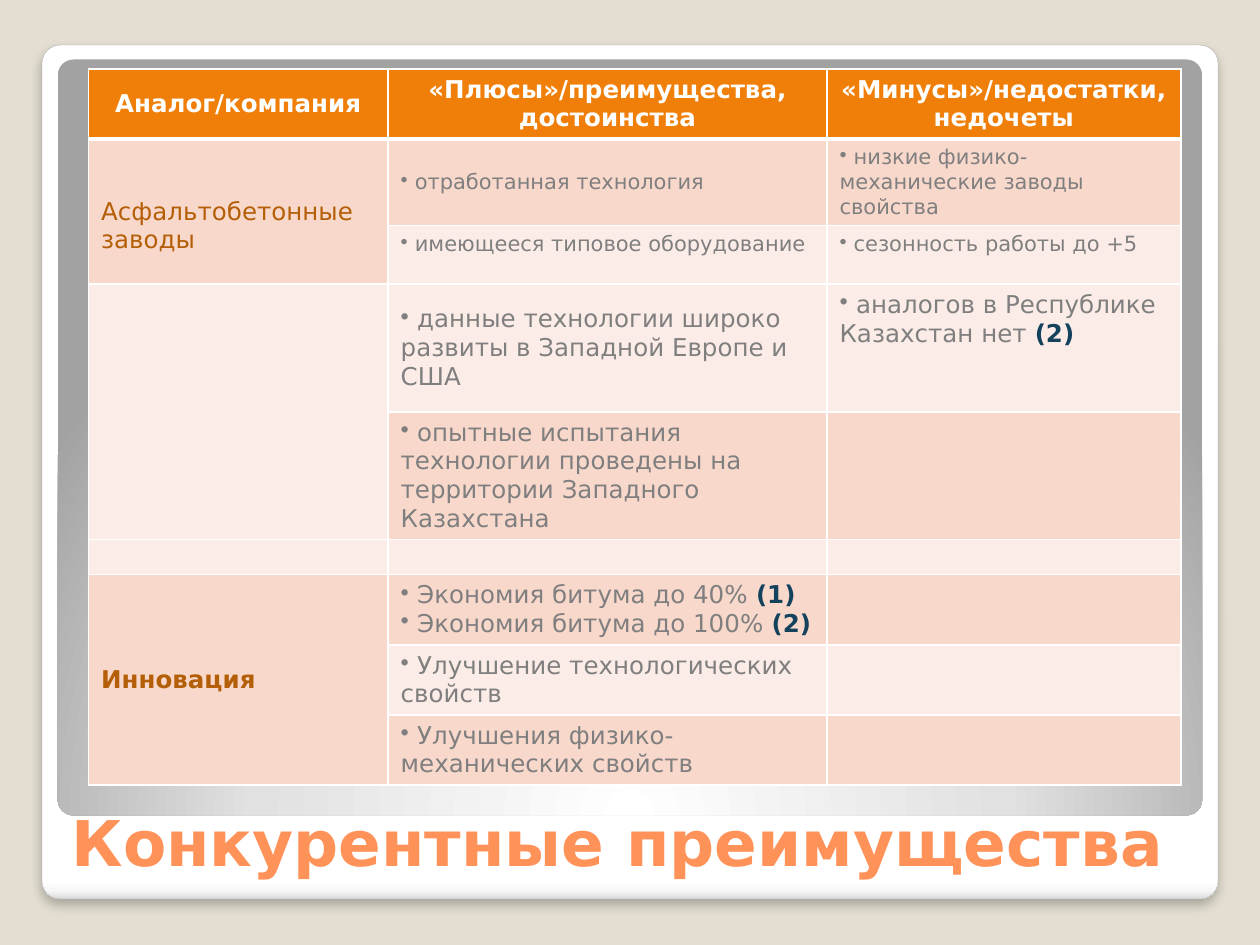
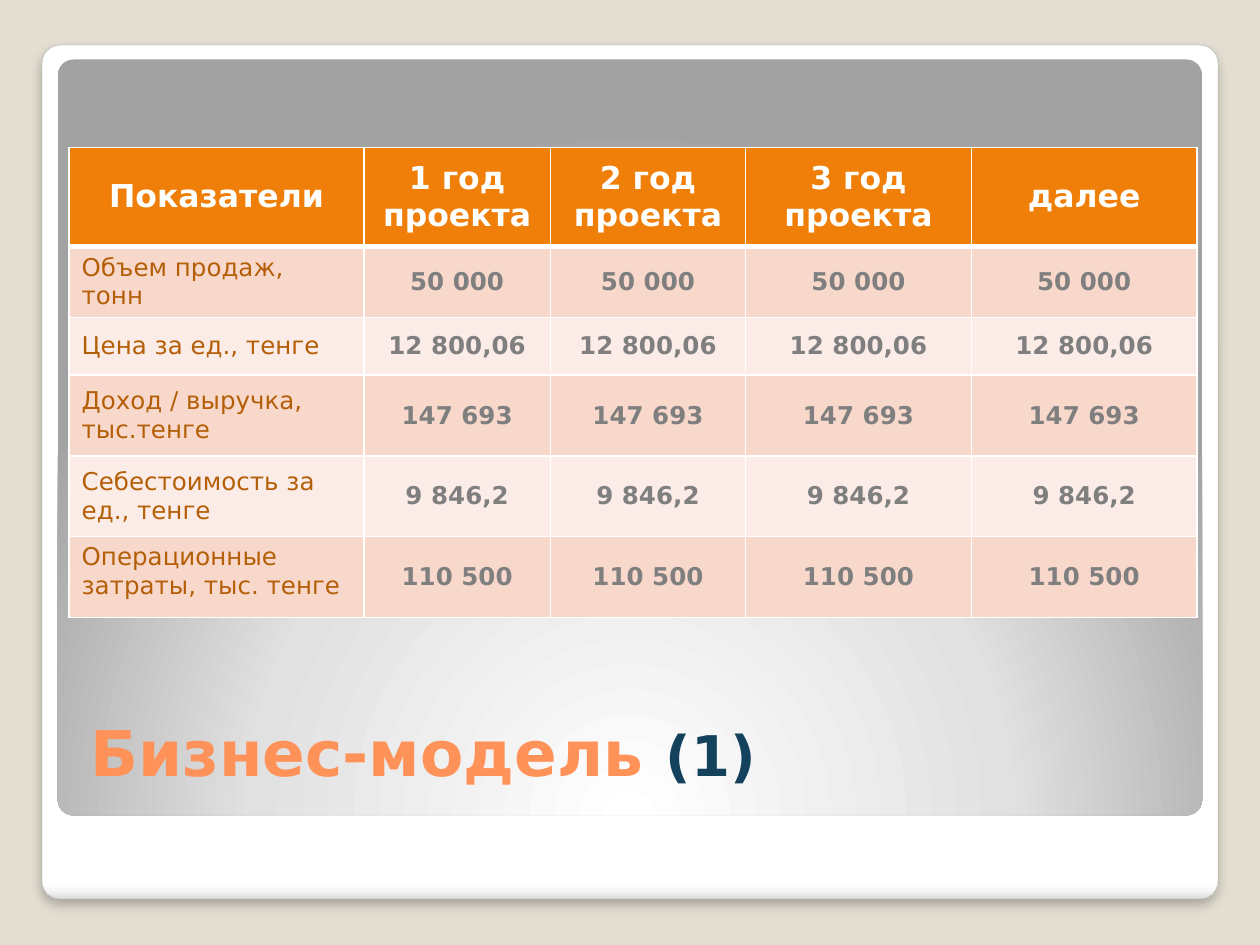
from lxml import etree
from pptx import Presentation
from pptx.dml.color import RGBColor
from pptx.enum.shapes import MSO_SHAPE
from pptx.enum.text import MSO_ANCHOR, PP_ALIGN
from pptx.oxml import parse_xml
from pptx.oxml.ns import nsdecls, qn
from pptx.util import Pt

# Shared look
FONT = "DejaVu Sans"
BACKDROP, WHITE, FRAME_LINE = "E3DED1", "FFFFFF", "A4A4A4"
TITLE, NOTE, LABEL, BODY = "FF9258", "14425D", "B45F07", "7F7F7F"
HEADER = "F07F09"
BANDS = {"D": "F9D8CC", "L": "FCECE7"}
CARD_STOPS = [(0, "FFFFFF"), (98, "FFFFFF"), (99, "F7F7F7"), (100, "DADADA")]
PANEL_STOPS = [(0, "FFFFFF"), (55, "E1E1E1"), (100, "A2A2A2")]
CARD_PATH = '<a:lin ang="5400000" scaled="0"/>'
PANEL_PATH = ('<a:path path="circle"><a:fillToRect l="50000" t="175000" '
              'r="50000" b="-75000"/></a:path>')
CARD_SHADOW = ('<a:outerShdw blurRad="76200" dist="50800" dir="5400000" rotWithShape="0">'
               '<a:srgbClr val="000000"><a:alpha val="25000"/></a:srgbClr></a:outerShdw>')

# Content: a bracketed number in a text is a highlighted note
ADVANTAGES = {
    "title": "Конкурентные преимущества",
    "title_box": (33.8, 461.5, 644.4, 44.6),
    "origin": (50.6, 39.4),
    "columns": (171.2, 250.8, 202.2),
    "heights": (40, 49, 33.5, 73, 73, 20, 40, 40, 40),
    "sizes": (14, 12, 12, 14, 14, 10, 14, 14, 14),
    "bands": "DLLDLDLD",
    "rows": [
        ("Аналог/компания", "«Плюсы»/преимущества, достоинства",
         "«Минусы»/недостатки, недочеты"),
        ("Асфальтобетонные заводы", "отработанная технология",
         "низкие физико-механические заводы свойства"),
        ("", "имеющееся типовое оборудование", "сезонность работы до +5"),
        ("", "данные технологии широко развиты в Западной Европе и США",
         "аналогов в Республике Казахстан нет (2)"),
        ("", "опытные испытания технологии проведены на территории Западного Казахстана", ""),
        ("", "", ""),
        ("Инновация", "Экономия битума до 40% (1)\nЭкономия битума до 100% (2)", ""),
        ("", "Улучшение технологических свойств", ""),
        ("", "Улучшения физико-механических свойств", ""),
    ],
    "bullets": True,
    "spans": [(1, 2), (3, 4), (6, 8)],
    "middle": {(1, 0), (1, 1), (3, 1), (6, 0)},
}

YEARS = 4
MODEL = {
    "title": "Бизнес-модель (1)",
    "title_box": (44.6, 371.5, 644.4, 82.8),
    "origin": (39.5, 84.4),
    "columns": (168.5, 106.5, 111.6, 129, 129),
    "heights": (56.5, 40.5, 33, 46.2, 46.2, 46.2),
    "sizes": (18, 14, 14, 14, 14, 14),
    "bands": "DLDLD",
    "rows": [("Показатели", "1 год проекта", "2 год проекта", "3 год проекта", "далее")] + [
        (indicator,) + (amount,) * YEARS for indicator, amount in [
            ("Объем продаж, тонн", "50 000"),
            ("Цена за ед., тенге", "12 800,06"),
            ("Доход / выручка, тыс.тенге", "147 693"),
            ("Себестоимость за ед., тенге", "9 846,2"),
            ("Операционные затраты, тыс. тенге", "110 500"),
        ]],
    "bullets": False,
    "spans": [],
    "middle": {(row, column) for row in range(1, 6) for column in range(5)} - {(5, 0)},
}


def rgb(color):
    return RGBColor.from_string(color)


def write(paragraph, text, size, color, bold=False, note_size=None):
    """Write a text, with its bracketed note in the note colour."""
    main, bracket, rest = text.partition("(")
    parts = [(main, size, color, bold), (bracket + rest, note_size or size, NOTE, True)]
    for words, points, tint, weight in parts:
        if words:
            run = paragraph.add_run()
            run.text = words
            run.font.name, run.font.size, run.font.bold = FONT, Pt(points), weight
            run.font.color.rgb = rgb(tint)


# Backdrop
def add_plate(slide, box, stops, direction):
    plate = slide.shapes.add_shape(MSO_SHAPE.ROUNDED_RECTANGLE, *map(Pt, box))
    plate.adjustments[0] = 0.021
    plate.shadow.inherit = False
    plate.line.fill.background()
    marks = "".join(f'<a:gs pos="{position * 1000}"><a:srgbClr val="{color}"/></a:gs>'
                    for position, color in stops)
    gradient = parse_xml(f'<a:gradFill {nsdecls("a")} rotWithShape="1">'
                         f'<a:gsLst>{marks}</a:gsLst>{direction}</a:gradFill>')
    plate.element.spPr.find(qn("a:prstGeom")).addnext(gradient)
    return plate


def add_backdrop(slide):
    slide.background.fill.solid()
    slide.background.fill.fore_color.rgb = rgb(BACKDROP)
    card = add_plate(slide, (24, 25.8, 672, 488), CARD_STOPS, CARD_PATH)
    card.line.color.rgb = rgb(FRAME_LINE)
    card.line.width = Pt(0.16)
    effects = card.element.spPr.find(qn("a:effectLst"))
    effects.append(parse_xml(CARD_SHADOW.replace("<a:outerShdw", f'<a:outerShdw {nsdecls("a")}', 1)))
    add_plate(slide, (33, 34, 654, 432), PANEL_STOPS, PANEL_PATH)


def add_title(slide, text, box):
    title = slide.shapes.title
    title.left, title.top, title.width, title.height = map(Pt, box)
    title.element.getparent().append(title.element)
    frame = title.text_frame
    frame.word_wrap = True
    frame.vertical_anchor = MSO_ANCHOR.BOTTOM
    frame.paragraphs[0].alignment = PP_ALIGN.LEFT
    write(frame.paragraphs[0], text, 36, TITLE, True, note_size=32)


# Tables
def set_borders(cell, row):
    widths = {"L": 1, "R": 1, "T": 3 if row == 1 else 1, "B": 3 if row == 0 else 1}
    for side, width in widths.items():
        cell._tc.get_or_add_tcPr().append(parse_xml(
            f'<a:ln{side} {nsdecls("a")} w="{Pt(width)}"><a:solidFill>'
            f'<a:srgbClr val="{WHITE}"/></a:solidFill></a:ln{side}>'))


def add_bullet(paragraph):
    properties = paragraph._p.get_or_add_pPr()
    properties.set("marL", "0")
    properties.set("indent", "0")
    etree.SubElement(properties, qn("a:buChar")).set("char", "•")


def fill_cell(cell, text, row, column, content):
    header, label = row == 0, column == 0
    size = content["sizes"][row]
    set_borders(cell, row)
    cell.fill.solid()
    cell.fill.fore_color.rgb = rgb(HEADER if header else BANDS[content["bands"][row - 1]])
    middle = header or (row, column) in content["middle"]
    cell.vertical_anchor = MSO_ANCHOR.MIDDLE if middle else MSO_ANCHOR.TOP
    frame = cell.text_frame
    if not text:
        ending = etree.SubElement(frame.paragraphs[0]._p, qn("a:endParaRPr"))
        ending.set("sz", str(min(size, 10) * 100))
        return
    bulleted = content["bullets"] and not header and not label
    color = WHITE if header else LABEL if label else BODY
    bold = header or text == "Инновация" or not (label or content["bullets"])
    for number, line in enumerate(text.split("\n")):
        paragraph = frame.add_paragraph() if number else frame.paragraphs[0]
        if bulleted:
            add_bullet(paragraph)
            line = " " + line
        elif header or not label:
            paragraph.alignment = PP_ALIGN.CENTER
        write(paragraph, line, 14 if label and not header else size, color, bold)


def add_grid(slide, content):
    rows, columns, heights = content["rows"], content["columns"], content["heights"]
    table = slide.shapes.add_table(
        len(rows), len(columns), *map(Pt, content["origin"]),
        Pt(sum(columns)), Pt(sum(heights))).table
    for column, width in zip(table.columns, columns):
        column.width = Pt(width)
    for row, height in zip(table.rows, heights):
        row.height = Pt(height)
    for row, texts in enumerate(rows):
        for column, text in enumerate(texts):
            fill_cell(table.cell(row, column), text, row, column, content)
    for first, last in content["spans"]:
        table.cell(first, 0).merge(table.cell(last, 0))
    return table


def main():
    deck = Presentation()
    deck.slide_width, deck.slide_height = Pt(720), Pt(540)
    tables = []
    for content in (ADVANTAGES, MODEL):
        slide = deck.slides.add_slide(deck.slide_layouts[5])
        add_backdrop(slide)
        add_title(slide, content["title"], content["title_box"])
        tables.append(add_grid(slide, content))
    # The first label sits one line below the middle
    tables[0].cell(1, 0).margin_top = Pt(20)
    deck.save("out.pptx")


if __name__ == "__main__":
    main()
